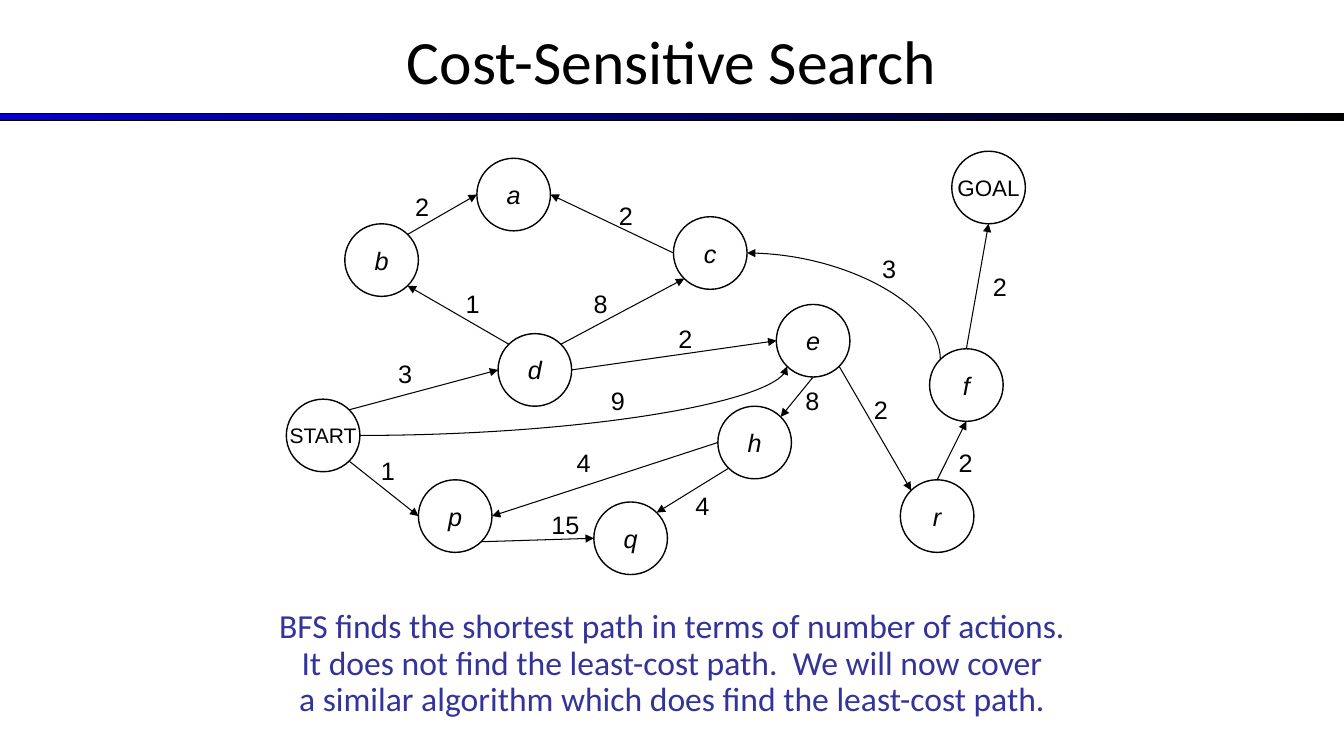
from lxml import etree
from pptx import Presentation
from pptx.dml.color import RGBColor
from pptx.enum.shapes import MSO_CONNECTOR, MSO_SHAPE
from pptx.enum.text import MSO_ANCHOR, PP_ALIGN
from pptx.oxml.ns import qn
from pptx.util import Inches, Pt

LINE, CURVE = MSO_CONNECTOR.STRAIGHT, MSO_CONNECTOR.CURVE
RECT, RING = MSO_SHAPE.RECTANGLE, MSO_SHAPE.FLOWCHART_CONNECTOR
LEFT, MID = PP_ALIGN.LEFT, PP_ALIGN.CENTER
TOP, MIDDLE = MSO_ANCHOR.TOP, MSO_ANCHOR.MIDDLE

BLACK, BLUE, NAVY = "000000", "0000CC", "333399"
WIDE, HIGH = 0.73, 0.72  # node size
DIAG = 0.707  # diagonal sites on a node's rim

# Node name: left, top
NODES = {
    "START": (2.84, 3.96), "GOAL": (9.44, 1.5), "d": (4.94, 3.31),
    "b": (3.42, 2.22), "p": (4.15, 4.76), "q": (5.89, 4.98),
    "c": (6.68, 2.15), "e": (7.7, 3.02), "h": (7.12, 4.03),
    "a": (4.73, 1.57), "f": (9.22, 3.46), "r": (8.93, 4.76),
}
SIZES = {"START": 15, "GOAL": 16}

# From node, site, to node, site, cost, cost left, cost top
EDGES = [
    ("START", "se", "p", "w", "1", 3.68, 4.47),
    ("p", "se", "q", "w", "15", 5.37, 5),
    ("h", "sw", "q", "ne", "4", 6.8, 4.82),
    ("h", "w", "p", "e", "4", 5.62, 4.39),
    ("e", "s", "h", "ne", "8", 7.89, 3.77),
    ("e", "se", "r", "nw", "2", 8.57, 3.86),
    ("r", "n", "f", "s", "2", 9.41, 4.39),
    ("f", "n", "GOAL", "s", "2", 9.75, 2.64),
    ("START", "ne", "d", "w", "3", 3.85, 3.51),
    ("d", "nw", "b", "se", "1", 4.52, 2.81),
    ("b", "ne", "a", "w", "2", 4.02, 1.85),
    ("c", "w", "a", "e", "2", 6.04, 1.94),
    ("d", "ne", "c", "sw", "8", 5.79, 2.81),
    ("d", "e", "e", "w", "2", 6.63, 3.16),
    ("f", "nw", "c", "e", "3", 8.65, 2.46),
    ("START", "e", "e", "sw", "9", 5.96, 3.77),
]
# Curved edges: whether each leaves its node vertically
CURVES = {("f", "c"): True, ("START", "e"): False}

NOTE = [
    "BFS finds the shortest path in terms of number of actions.",
    "It does not find the least-cost path.  We will now cover",
    "a similar algorithm which does find the least-cost path.",
]


def color(code):
    return RGBColor.from_string(code)


def site(name, side):
    """Point on a node's rim in a compass direction."""
    left, top = NODES[name]
    reach = DIAG if len(side) == 2 else 1
    dx = ("e" in side) - ("w" in side)
    dy = ("s" in side) - ("n" in side)
    return left + WIDE / 2 * (1 + reach * dx), top + HIGH / 2 * (1 + reach * dy)


class Painter:
    def __init__(self, slide):
        self.shapes = slide.shapes
        self.style = {"name": "Arial", "size": 18, "italic": False}

    def label(self, shape, lines, align=LEFT, anchor=TOP, wrap=True,
              space=1.0, ink=BLACK, **font):
        frame = shape.text_frame
        frame.word_wrap, frame.vertical_anchor = wrap, anchor
        frame.text = "\n".join(lines)
        style = {**self.style, **font}
        style["size"] = Pt(style["size"])
        for para in frame.paragraphs:
            para.alignment, para.line_spacing = align, space
            for key, value in style.items():
                setattr(para.font, key, value)
            para.font.color.rgb = color(ink)

    def text(self, box, lines, **style):
        self.label(self.shapes.add_textbox(*map(Inches, box)), lines, **style)

    def shape(self, kind, box, width):
        item = self.shapes.add_shape(kind, *map(Inches, box))
        item.shadow.inherit = False
        item.fill.background()
        item.line.color.rgb = color(BLACK)
        item.line.width = Pt(width)
        return item

    def bar(self, box, codes):
        fill = self.shape(RECT, box, 0.75).fill
        fill.gradient()
        fill.gradient_angle = 0
        for stop, code in zip(fill.gradient_stops, codes):
            stop.color.rgb = color(code)

    def node(self, name, spot):
        ring = self.shape(RING, (*spot, WIDE, HIGH), 1)
        self.label(ring, [name], align=MID, anchor=MIDDLE, wrap=False,
                   size=SIZES.get(name, 18), italic=name not in SIZES)

    def arrow(self, start, end, kind=LINE):
        item = self.shapes.add_connector(kind, *map(Inches, (*start, *end)))
        item.line.color.rgb = color(BLACK)
        item.line.width = Pt(0.75)
        props = item._element.spPr
        tail = etree.SubElement(props.find(qn("a:ln")), qn("a:tailEnd"))
        tail.set("type", "triangle")
        etree.SubElement(props, qn("a:effectLst"))
        return props

    def curve(self, start, end, turn):
        if turn:  # lay the box on its side, then rotate it back
            mx, my = (start[0] + end[0]) / 2, (start[1] + end[1]) / 2
            start, end = [(mx + y - my, my - x + mx) for x, y in (start, end)]
        props = self.arrow(start, end, CURVE)
        props.find(qn("a:prstGeom")).set("prst", "curvedConnector2")
        if turn:
            props.find(qn("a:xfrm")).set("rot", "5400000")


def main():
    deck = Presentation()
    deck.slide_width, deck.slide_height = Inches(13.33), Inches(7.5)
    paint = Painter(deck.slides.add_slide(deck.slide_layouts[6]))

    # Title, rule and note
    paint.bar((0, 1.13, 13.33, 0.07), (BLUE, BLACK))
    paint.text((0, -0.03, 13.33, 1.25), ["Cost-Sensitive Search"],
               align=MID, anchor=MIDDLE, name="Calibri", size=44)
    paint.text((0, 6, 13.33, 1.34), NOTE, align=MID, space=0.9,
               ink=NAVY, name="Calibri", size=24)

    # Graph nodes
    for name, spot in NODES.items():
        paint.node(name, spot)

    # Edges with their costs
    for tail, out, head, into, cost, left, top in EDGES:
        start, end = site(tail, out), site(head, into)
        if (tail, head) in CURVES:
            paint.curve(start, end, CURVES[tail, head])
        else:
            paint.arrow(start, end)
        paint.text((left, top, 0.17 * (1 + len(cost)), 0.4), [cost])

    deck.save("out.pptx")


if __name__ == "__main__":
    main()
